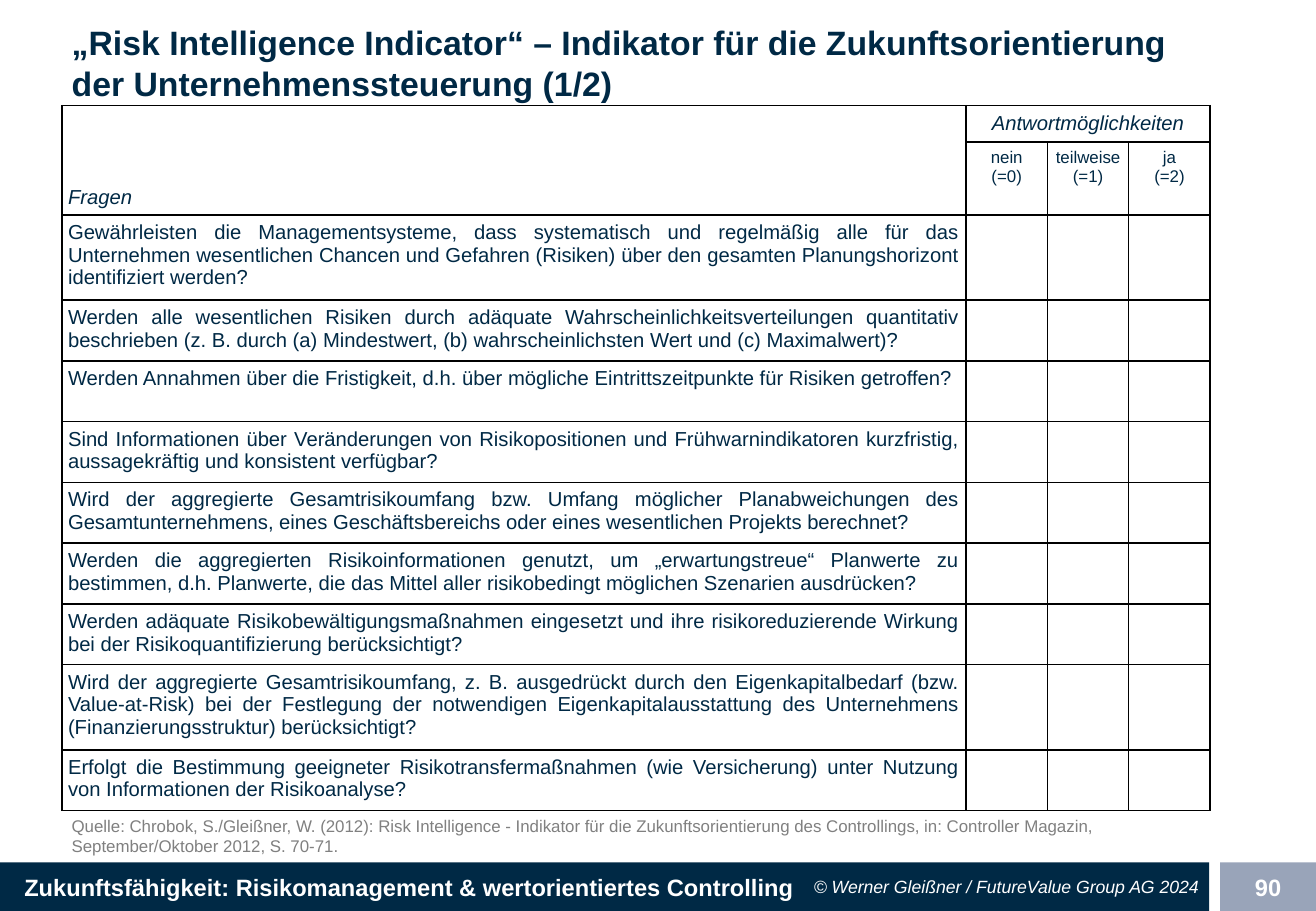
from dataclasses import dataclass
from lxml.etree import SubElement
from pptx import Presentation
from pptx.dml.color import RGBColor
from pptx.enum.shapes import MSO_SHAPE
from pptx.enum.text import MSO_ANCHOR, PP_ALIGN
from pptx.oxml.ns import qn
from pptx.util import Emu, Pt

PX = 9144  # 100 px to the inch


@dataclass(frozen=True)
class Theme:
    font: str = "Arial"
    navy: str = "002945"
    steel: str = "99A4B9"
    grey: str = "808080"
    white: str = "FFFFFF"
    border: str = "000000"
    title: float = 20
    footer: float = 14
    body: float = 12
    credit: float = 10.5
    small: float = 10


THEME = Theme()
SLIDE_SIZE = (1083, 750)
COLUMNS = (744, 67, 67, 67)
HEADER_ROWS = (30, 60)
ROW_HEIGHT = {2: 50, 3: 70}  # by number of text lines
ANSWERS = ("nein\n(=0)", "teilweise\n(=1)", "ja\n(=2)")
QUESTIONS = (
    (3, "Gewährleisten die Managementsysteme, dass systematisch und regelmäßig alle für das Unternehmen "
        "wesentlichen Chancen und Gefahren (Risiken) über den gesamten Planungshorizont identifiziert werden?"),
    (2, "Werden alle wesentlichen Risiken durch adäquate Wahrscheinlichkeitsverteilungen quantitativ "
        "beschrieben (z. B. durch (a) Mindestwert, (b) wahrscheinlichsten Wert und (c) Maximalwert)?"),
    (2, "Werden Annahmen über die Fristigkeit, d.h. über mögliche Eintrittszeitpunkte für Risiken getroffen?"),
    (2, "Sind Informationen über Veränderungen von Risikopositionen und Frühwarnindikatoren kurzfristig, "
        "aussagekräftig und konsistent verfügbar?"),
    (2, "Wird der aggregierte Gesamtrisikoumfang bzw. Umfang möglicher Planabweichungen des "
        "Gesamtunternehmens, eines Geschäftsbereichs oder eines wesentlichen Projekts berechnet?"),
    (2, "Werden die aggregierten Risikoinformationen genutzt, um „erwartungstreue“ Planwerte zu bestimmen, "
        "d.h. Planwerte, die das Mittel aller risikobedingt möglichen Szenarien ausdrücken?"),
    (2, "Werden adäquate Risikobewältigungsmaßnahmen eingesetzt und ihre risikoreduzierende Wirkung bei der "
        "Risikoquantifizierung berücksichtigt?"),
    (3, "Wird der aggregierte Gesamtrisikoumfang, z. B. ausgedrückt durch den Eigenkapitalbedarf (bzw. "
        "Value-at-Risk) bei der Festlegung der notwendigen Eigenkapitalausstattung des Unternehmens "
        "(Finanzierungsstruktur) berücksichtigt?"),
    (2, "Erfolgt die Bestimmung geeigneter Risikotransfermaßnahmen (wie Versicherung) unter Nutzung von "
        "Informationen der Risikoanalyse?"),
)


def px(*lengths):
    return [Emu(length * PX) for length in lengths]


def write(frame, text, size=THEME.body, color=THEME.navy, bold=False, italic=False,
          align=PP_ALIGN.LEFT, after=0):
    para = frame.paragraphs[0]
    para.text = text
    para.alignment = align
    para.space_after = Pt(after)
    for line_break in para._p.findall(qn("a:br")):
        SubElement(line_break, qn("a:rPr")).set("sz", str(int(size * 100)))
    for span in para.runs:
        span.font.name = THEME.font
        span.font.size = Pt(size)
        span.font.bold = bold
        span.font.italic = italic
        span.font.color.rgb = RGBColor.from_string(color)


def set_margins(target, left, top, right, bottom):
    (target.margin_left, target.margin_top,
     target.margin_right, target.margin_bottom) = px(left, top, right, bottom)


def add_text(page, box, text, fill=None, anchor=MSO_ANCHOR.MIDDLE, inset=8, **style):
    """Add a text box, or a filled bar when a fill is given."""
    if fill:
        shape = page.shapes.add_shape(MSO_SHAPE.RECTANGLE, *px(*box))
        shape.shadow.inherit = False
        shape.fill.solid()
        shape.fill.fore_color.rgb = RGBColor.from_string(fill)
        shape.line.fill.background()
    else:
        shape = page.shapes.add_textbox(*px(*box))
    frame = shape.text_frame
    frame.word_wrap = True
    frame.vertical_anchor = anchor
    set_margins(frame, inset, 4, 8, 4)
    write(frame, text, **style)


def add_borders(cell):
    properties = cell._tc.get_or_add_tcPr()
    for index, side in enumerate(("a:lnL", "a:lnR", "a:lnT", "a:lnB")):
        line = properties.makeelement(qn(side), {"w": str(Pt(1))})
        fill = SubElement(line, qn("a:solidFill"))
        SubElement(fill, qn("a:srgbClr")).set("val", THEME.border)
        properties.insert(index, line)


def add_questionnaire(page, box):
    left, top, width, height = box
    heights = HEADER_ROWS + tuple(ROW_HEIGHT[lines] for lines, _ in QUESTIONS)
    table = page.shapes.add_table(len(heights), len(COLUMNS), *px(left, top, width, height)).table
    for column, size in zip(table.columns, px(*COLUMNS)):
        column.width = size
    for row, size in zip(table.rows, px(*heights)):
        row.height = size
    for cell in table.iter_cells():
        cell.fill.background()
        set_margins(cell, 5, 5, 5, 5)
        add_borders(cell)

    questions_head, answers_head = table.cell(0, 0), table.cell(0, 1)
    questions_head.merge(table.cell(1, 0))
    answers_head.merge(table.cell(0, 3))
    questions_head.vertical_anchor = MSO_ANCHOR.BOTTOM
    write(questions_head.text_frame, "Fragen", italic=True, align=PP_ALIGN.JUSTIFY, after=6)
    write(answers_head.text_frame, "Antwortmöglichkeiten", italic=True, align=PP_ALIGN.CENTER, after=6)
    for column, answer in enumerate(ANSWERS, 1):
        write(table.cell(1, column).text_frame, answer, size=THEME.small, align=PP_ALIGN.CENTER, after=6)
    for row, (_, question) in enumerate(QUESTIONS, len(HEADER_ROWS)):
        write(table.cell(row, 0).text_frame, question, align=PP_ALIGN.JUSTIFY, after=6)


def add_footer(page, box):
    left, top, width, height = box
    number_width, gap, credit_width = 79, 9, 433
    bar_width = width - number_width - gap
    label = dict(size=THEME.footer, color=THEME.white, bold=True)
    add_text(page, (left, top, bar_width, height),
             "Zukunftsfähigkeit: Risikomanagement & wertorientiertes Controlling",
             fill=THEME.navy, inset=20, **label)
    add_text(page, (left + width - number_width, top, number_width, height), "90",
             fill=THEME.steel, align=PP_ALIGN.CENTER, **label)
    add_text(page, (left + bar_width - credit_width, top, credit_width, height),
             "© Werner Gleißner / FutureValue Group AG 2024",
             size=THEME.credit, color=THEME.white, italic=True, align=PP_ALIGN.RIGHT)


def main():
    deck = Presentation()
    deck.slide_width, deck.slide_height = px(*SLIDE_SIZE)
    page = deck.slides.add_slide(deck.slide_layouts[6])
    add_footer(page, (0, 710, 1083, 40))
    add_text(page, (51, 16, 945, 71),
             "„Risk Intelligence Indicator“ – Indikator für die Zukunftsorientierung der "
             "Unternehmenssteuerung (1/2)", size=THEME.title, bold=True)
    add_questionnaire(page, (51, 87, 945, 580))
    add_text(page, (51, 591, 945, 118),
             "Quelle: Chrobok, S./Gleißner, W. (2012): Risk Intelligence - Indikator für die "
             "Zukunftsorientierung des Controllings, in: Controller Magazin, September/Oktober 2012, S. 70-71.",
             anchor=MSO_ANCHOR.BOTTOM, size=THEME.small, color=THEME.grey, after=3)
    deck.save("out.pptx")


if __name__ == "__main__":
    main()
